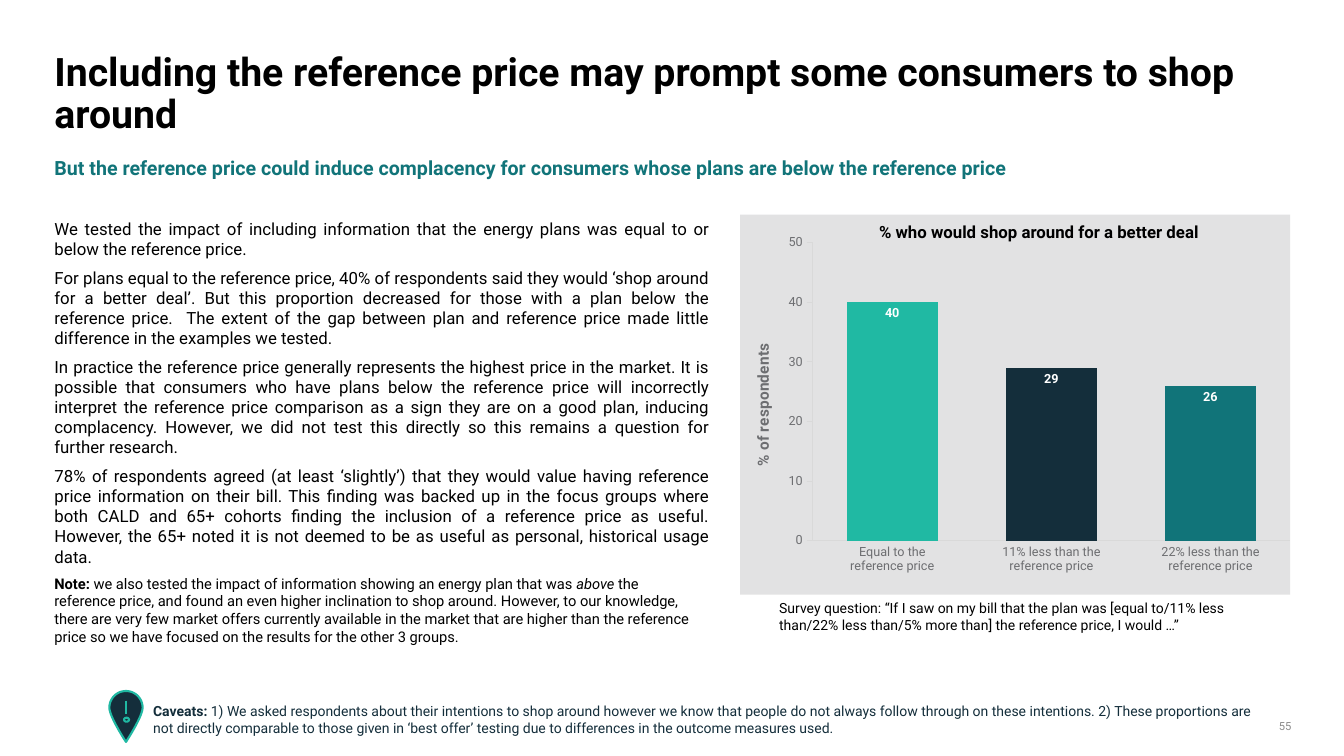
import math

from lxml import etree
from pptx import Presentation
from pptx.chart.data import CategoryChartData
from pptx.dml.color import RGBColor
from pptx.enum.chart import XL_CHART_TYPE, XL_LABEL_POSITION, XL_TICK_MARK
from pptx.enum.shapes import MSO_CONNECTOR, MSO_SHAPE
from pptx.enum.text import MSO_ANCHOR, PP_ALIGN
from pptx.oxml import parse_xml
from pptx.oxml.ns import nsdecls, qn
from pptx.util import Inches, Pt

COLUMN = XL_CHART_TYPE.COLUMN_CLUSTERED
INSIDE_END = XL_LABEL_POSITION.INSIDE_END
TICK_NONE, TICK_OUT = XL_TICK_MARK.NONE, XL_TICK_MARK.OUTSIDE
STRAIGHT, OVAL = MSO_CONNECTOR.STRAIGHT, MSO_SHAPE.OVAL
TOP, BOTTOM = MSO_ANCHOR.TOP, MSO_ANCHOR.BOTTOM
LEFT, CENTER, RIGHT, JUSTIFY = (PP_ALIGN.LEFT, PP_ALIGN.CENTER,
                                PP_ALIGN.RIGHT, PP_ALIGN.JUSTIFY)

FONT = "Roboto"
BLACK, WHITE, NAVY, TEAL, MINT = "000000", "FFFFFF", "142E3B", "117479", "20B9A3"
GREY, PALE, PANEL, PAGE_GREY = "6D6E71", "D9D9D9", "E2E2E3", "8C8C8C"
MARGIN = 0.54
NO_INSET = (0, 0, 0, 0)
BODY_INSET = (0, 0.05, 0.1, 0.05)
BOX_INSET = (0.1, 0.05, 0.1, 0.05)

BODY = [
    "We tested the impact of including information that the energy plans was "
    "equal to or below the reference price.",
    "For plans equal to the reference price, 40% of respondents said they would "
    "‘shop around for a better deal’. But this proportion decreased for those with "
    "a plan below the reference price.  The extent of the gap between plan and "
    "reference price made little difference in the examples we tested.",
    "In practice the reference price generally represents the highest price in the "
    "market. It is possible that consumers who have plans below the reference price "
    "will incorrectly interpret the reference price comparison as a sign they are on "
    "a good plan, inducing complacency. However, we did not test this directly so "
    "this remains a question for further research.",
    "78% of respondents agreed (at least ‘slightly’) that they would value having "
    "reference price information on their bill. This finding was backed up in the "
    "focus groups where both CALD and 65+ cohorts finding the inclusion of a "
    "reference price as useful. However, the 65+ noted it is not deemed to be as "
    "useful as personal, historical usage data.",
]
NOTE = [
    ("Note: ", {"bold": True}),
    ("we also tested the impact of information showing an energy plan that was ", {}),
    ("above", {"italic": True}),
    (" the reference price, and found an even higher inclination to shop around. "
     "However, to our knowledge, there are very few market offers currently available "
     "in the market that are higher than the reference price so we have focused on "
     "the results for the other 3 groups.", {}),
]
CAVEATS = [
    ("Caveats: ", {"bold": True}),
    ("1) We asked respondents about their intentions to shop around however we know "
     "that people do not always follow through on these intentions. 2) These "
     "proportions are not directly comparable to those given in ‘best offer’ testing "
     "due to differences in the outcome measures used.", {}),
]
SURVEY = ("Survey question: “If I saw on my bill that the plan was [equal to/11% less "
          "than/22% less than/5% more than] the reference price, I would …”")
RESULTS = [("Equal to the\nreference price", 40, MINT),
           ("11% less than the reference price", 29, NAVY),
           ("22% less than the reference price", 26, TEAL)]


def rgb(color):
    return RGBColor.from_string(color)


def style_font(font, size, color, **extra):
    for name, value in {"name": FONT, "size": Pt(size), "bold": False, **extra}.items():
        setattr(font, name, value)
    font.color.rgb = rgb(color)


def add_text(s, box, paras, size, color=BLACK, bold=False, inset=BOX_INSET,
             align=LEFT, anchor=TOP, wrap=True, after=0, spacing=1.0):
    """Each paragraph is a string or a list of (text, font values) runs."""
    tf = s.shapes.add_textbox(*map(Inches, box)).text_frame
    tf.word_wrap, tf.vertical_anchor = wrap, anchor
    for side, value in zip(("left", "top", "right", "bottom"), inset):
        setattr(tf, f"margin_{side}", Inches(value))
    for i, para in enumerate(paras):
        p = tf.add_paragraph() if i else tf.paragraphs[0]
        p.alignment, p.space_after, p.line_spacing = align, Pt(after), spacing
        for text, extra in [(para, {})] if isinstance(para, str) else para:
            r = p.add_run()
            r.text = text
            style_font(r.font, size, color, **{"bold": bold, **extra})


def style_shape(sp):
    sp.shadow.inherit = False
    sp.fill.solid()
    sp.fill.fore_color.rgb = rgb(NAVY)
    style_line(sp.line, MINT, 1.5)


def style_line(line, color, width):
    line.color.rgb = rgb(color)
    line.width = Pt(width)


def add_pin(s, cx=1.25, cy=7.02, radius=0.165, tip=7.36, steps=24):
    """Map pin with an exclamation mark."""
    points = []
    for i in range(steps + 1):  # round head
        angle = math.pi * (1 + i / steps)
        points.append((cx + radius * math.cos(angle), cy + radius * math.sin(angle)))
    side = []
    for i in range(1, steps + 1):  # right side, a cubic curve down to the tip
        t = i / steps
        side.append((radius * ((1 - t) ** 3 + 3 * t * (1 - t) ** 2),
                     cy + 0.27 * t * (1 - t) ** 2 + (tip - cy) * (3 * t ** 2 - 2 * t ** 3)))
    points += [(cx + dx, y) for dx, y in side]
    points += [(cx - dx, y) for dx, y in reversed(side[:-1])]
    outline = [(Inches(x), Inches(y)) for x, y in points]
    builder = s.shapes.build_freeform(*outline[0])
    builder.add_line_segments(outline[1:], close=True)
    style_shape(builder.convert_to_shape())

    stroke = s.shapes.add_connector(STRAIGHT, *map(Inches, (cx, 6.95, cx, 7.08)))
    style_line(stroke.line, MINT, 1.5)
    etree.SubElement(stroke._element.spPr, qn("a:effectLst"))
    style_shape(s.shapes.add_shape(OVAL, *map(Inches, (cx - 0.02, 7.12, 0.05, 0.04))))


def style_axis(axis, tick):
    axis.has_major_gridlines = False
    axis.major_tick_mark, axis.minor_tick_mark = tick, TICK_NONE
    style_font(axis.tick_labels.font, 9, GREY)
    style_line(axis.format.line, PALE, 0.75)


def add_column_chart(s, box):
    data = CategoryChartData()
    data.categories = [name for name, _, _ in RESULTS]
    data.add_series("Series 1", [value for _, value, _ in RESULTS])
    chart = s.shapes.add_chart(COLUMN, *map(Inches, box), data).chart
    chart.has_legend = chart.has_title = False
    style_font(chart.font, 10, BLACK)

    # Axes
    style_axis(chart.category_axis, TICK_NONE)
    axis = chart.value_axis
    style_axis(axis, TICK_OUT)
    axis.minimum_scale, axis.maximum_scale, axis.major_unit = 0, 50, 10
    r = axis.axis_title.text_frame.paragraphs[0].add_run()
    r.text = "% of respondents"
    style_font(r.font, 11, GREY, bold=True)

    # Columns and values
    plot = chart.plots[0]
    plot.gap_width, plot.vary_by_categories = 75, False
    series = plot.series[0]
    for i, (_, _, color) in enumerate(RESULTS):
        fill = series.points[i].format.fill
        fill.solid()
        fill.fore_color.rgb = rgb(color)
    labels = series.data_labels
    labels.show_value, labels.position = True, INSIDE_END
    style_font(labels.font, 9, WHITE, bold=True)

    # Plot position and panel fill
    area = {"x": 0.132, "y": 0.074, "w": 0.868, "h": 0.784}
    layout = '<c:layoutTarget val="inner"/><c:xMode val="edge"/><c:yMode val="edge"/>'
    layout += "".join(f'<c:{key} val="{value}"/>' for key, value in area.items())
    plot_area = chart._chartSpace.chart.plotArea
    for old in plot_area.findall(qn("c:layout")):
        plot_area.remove(old)
    plot_area.insert(0, parse_xml(f'<c:layout {nsdecls("c")}><c:manualLayout>{layout}'
                                  "</c:manualLayout></c:layout>"))
    chart._chartSpace.chart.addnext(parse_xml(
        f'<c:spPr {nsdecls("c", "a")}><a:solidFill><a:srgbClr val="{PANEL}"/>'
        "</a:solidFill><a:ln><a:noFill/></a:ln></c:spPr>"))


def main():
    prs = Presentation()
    prs.slide_width, prs.slide_height = Inches(13.33), Inches(7.5)
    s = prs.slides.add_slide(prs.slide_layouts[6])

    # Headings
    add_text(s, (MARGIN, 0.52, 12.28, 0.85),
             ["Including the reference price may prompt some consumers to shop around"],
             28, bold=True, inset=NO_INSET, spacing=0.9)
    add_text(s, (MARGIN, 1.55, 12.28, 0.24),
             ["But the reference price could induce complacency for consumers whose "
              "plans are below the reference price"],
             14, TEAL, bold=True, inset=NO_INSET)

    # Findings
    add_text(s, (MARGIN, 2.12, 6.6, 3.38), BODY, 12, inset=BODY_INSET,
             align=JUSTIFY, after=6)
    add_text(s, (MARGIN, 5.65, 6.44, 0.81), [NOTE], 10.5, inset=BODY_INSET)

    # Chart
    add_column_chart(s, (7.34, 2.13, 5.46, 3.77))
    add_text(s, (8.48, 2.15, 3.65, 0.3), ["% who would shop around for a better deal"],
             12, bold=True, align=CENTER, wrap=False)
    add_text(s, (7.63, 5.9, 5.18, 0.45), [SURVEY], 10)

    # Caveats and page number
    add_pin(s)
    add_text(s, (1.42, 6.92, 11.19, 0.44), [CAVEATS], 10, NAVY)
    add_text(s, (12.36, 7.14, 0.45, 0.13), ["55"], 8, PAGE_GREY, inset=NO_INSET,
             align=RIGHT, anchor=BOTTOM)
    prs.save("out.pptx")


if __name__ == "__main__":
    main()
